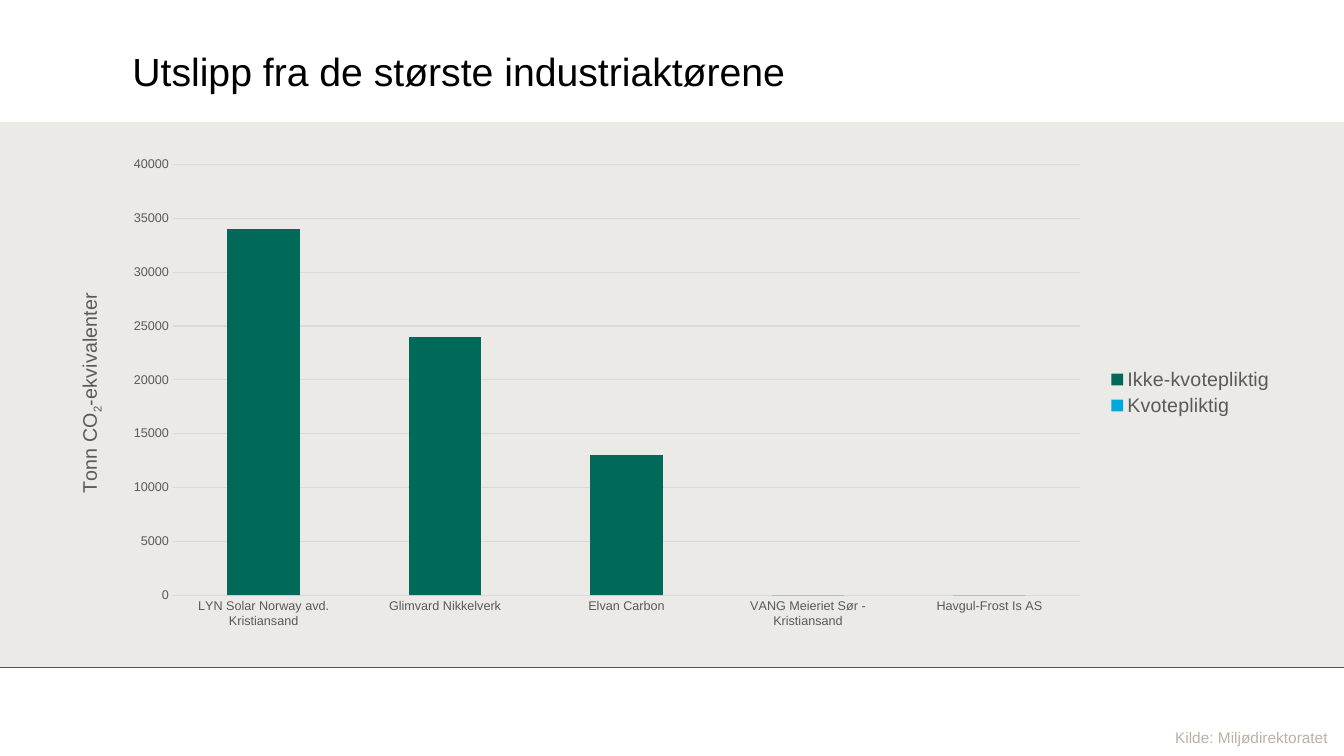
from dataclasses import dataclass

from lxml.etree import SubElement
from pptx import Presentation
from pptx.chart.axis import CategoryAxis, ValueAxis
from pptx.chart.chart import Chart
from pptx.chart.data import CategoryChartData
from pptx.dml.color import RGBColor
from pptx.enum.chart import XL_CHART_TYPE, XL_LEGEND_POSITION, XL_TICK_MARK
from pptx.enum.shapes import MSO_CONNECTOR, MSO_SHAPE
from pptx.enum.text import MSO_ANCHOR
from pptx.oxml import parse_xml
from pptx.oxml.ns import nsdecls, qn
from pptx.slide import Slide
from pptx.text.text import Font
from pptx.util import Pt

FONT = "Arial"
BLACK = RGBColor(0x00, 0x00, 0x00)
SAND = RGBColor(0xEC, 0xEA, 0xE6)
TAUPE = RGBColor(0xBA, 0xB2, 0xA4)
GREY = RGBColor(0x59, 0x59, 0x59)
GRID = RGBColor(0xD9, 0xD9, 0xD9)
BLUE = RGBColor(0x00, 0xA9, 0xDA)
GREEN = RGBColor(0x00, 0x69, 0x5A)

SLIDE_WIDTH, SLIDE_HEIGHT = 960, 540
BAND_TOP, BAND_BOTTOM = 87.1, 476.8
RULE_TOP = 476.6
CHART_LEFT, CHART_TOP, CHART_WIDTH, CHART_HEIGHT = 40.3, 105.1, 877, 350.6


@dataclass(frozen=True)
class Label:
    text: str
    left: float
    top: float
    width: float
    height: float
    size: float
    color: RGBColor
    inset_x: float = 0
    inset_y: float = 0
    anchor: MSO_ANCHOR = MSO_ANCHOR.MIDDLE
    wrap: bool = True


@dataclass(frozen=True)
class Emission:
    name: str
    tonnes: tuple[int, ...]
    color: RGBColor


LABELS = (
    Label("Utslipp fra de største industriaktørene", 94.6, 23.5, 799.2, 54, 28, BLACK),
    Label("Kilde: Miljødirektoratet", 832.3, 516.4, 127.4, 20.9, 11, TAUPE,
          7.2, 3.6, MSO_ANCHOR.TOP, False),
)
COMPANIES = (
    "LYN Solar Norway avd. Kristiansand",
    "Glimvard Nikkelverk",
    "Elvan Carbon",
    "VANG Meieriet Sør - Kristiansand",
    "Havgul-Frost Is AS",
)
EMISSIONS = (
    Emission("Kvotepliktig", (0, 0, 0, 0, 0), BLUE),
    Emission("Ikke-kvotepliktig", (34000, 24000, 13000, 0, 0), GREEN),
)
AXIS_TITLE = (("Tonn CO", False), ("2", True), ("-ekvivalenter", False))


def style_font(font: Font, size: float, color: RGBColor) -> None:
    font.name = FONT
    font.size = Pt(size)
    font.bold = False
    font.color.rgb = color


def add_band(slide: Slide) -> None:
    rule = slide.shapes.add_connector(
        MSO_CONNECTOR.STRAIGHT, Pt(0), Pt(RULE_TOP), Pt(SLIDE_WIDTH), Pt(RULE_TOP))
    rule.line.color.rgb = BLACK
    rule.line.width = Pt(0.75)
    SubElement(rule._element.spPr, qn("a:effectLst"))
    band = slide.shapes.add_shape(
        MSO_SHAPE.RECTANGLE, Pt(0), Pt(BAND_TOP), Pt(SLIDE_WIDTH), Pt(BAND_BOTTOM - BAND_TOP))
    band.shadow.inherit = False
    band.fill.solid()
    band.fill.fore_color.rgb = SAND
    band.line.fill.background()


def add_label(slide: Slide, label: Label) -> None:
    box = slide.shapes.add_textbox(
        Pt(label.left), Pt(label.top), Pt(label.width), Pt(label.height))
    frame = box.text_frame
    frame.word_wrap = label.wrap
    frame.vertical_anchor = label.anchor
    frame.margin_left = frame.margin_right = Pt(label.inset_x)
    frame.margin_top = frame.margin_bottom = Pt(label.inset_y)
    run = frame.paragraphs[0].add_run()
    run.text = label.text
    style_font(run.font, label.size, label.color)


def place(parent, index: int, **settings: object) -> None:
    for previous in parent.findall(qn("c:layout")):
        parent.remove(previous)
    layout = parse_xml(f"<c:layout {nsdecls('c')}><c:manualLayout/></c:layout>")
    for name, value in settings.items():
        SubElement(layout[0], qn(f"c:{name}")).set("val", str(value))
    parent.insert(index, layout)


def style_axis(axis: CategoryAxis | ValueAxis) -> None:
    axis.major_tick_mark = axis.minor_tick_mark = XL_TICK_MARK.NONE
    style_font(axis.tick_labels.font, 9, GREY)


def add_axis_title(axis: ValueAxis) -> None:
    title = axis.axis_title
    frame = title.text_frame
    body = frame._txBody.bodyPr
    body.set("rot", "-5400000")
    body.set("vert", "horz")
    for text, subscript in AXIS_TITLE:
        run = frame.paragraphs[0].add_run()
        run.text = text
        style_font(run.font, 14, GREY)
        if subscript:
            run.font._element.set("baseline", "-25000")
    place(title._element, 1, xMode="edge", yMode="edge",
          x=12.5 / CHART_WIDTH, y=102 / CHART_HEIGHT)


def style_chart(chart: Chart) -> None:
    style_font(chart.font, 10, BLACK)
    chart.has_title = False
    chart.has_legend = True
    chart.legend.position = XL_LEGEND_POSITION.RIGHT
    chart.legend.include_in_layout = False
    style_font(chart.legend.font, 14, GREY)

    plot = chart.plots[0]
    plot.gap_width = 150
    plot.overlap = 100
    plot.vary_by_categories = False
    for series, emission in zip(plot.series, EMISSIONS):
        series.format.fill.solid()
        series.format.fill.fore_color.rgb = emission.color

    style_axis(chart.category_axis)
    style_axis(chart.value_axis)
    chart.value_axis.minimum_scale = 0
    chart.value_axis.maximum_scale = 40000
    chart.value_axis.major_unit = 5000
    chart.value_axis.format.line.fill.background()
    for line in (chart.category_axis.format.line,
                 chart.value_axis.major_gridlines.format.line):
        line.color.rgb = GRID
        line.width = Pt(0.75)
    add_axis_title(chart.value_axis)
    place(chart._chartSpace.chart.plotArea, 0, layoutTarget="inner",
          xMode="edge", yMode="edge",
          x=83.2 / CHART_WIDTH, y=12.5 / CHART_HEIGHT,
          w=648 / CHART_WIDTH, h=307.5 / CHART_HEIGHT)


def add_emission_chart(slide: Slide) -> None:
    data = CategoryChartData(number_format="General")
    data.categories = COMPANIES
    for emission in EMISSIONS:
        data.add_series(emission.name, emission.tonnes)
    frame = slide.shapes.add_chart(
        XL_CHART_TYPE.COLUMN_STACKED, Pt(CHART_LEFT), Pt(CHART_TOP),
        Pt(CHART_WIDTH), Pt(CHART_HEIGHT), data)
    style_chart(frame.chart)


def main() -> None:
    presentation = Presentation()
    presentation.slide_width = Pt(SLIDE_WIDTH)
    presentation.slide_height = Pt(SLIDE_HEIGHT)
    slide = presentation.slides.add_slide(presentation.slide_layouts[6])
    add_band(slide)
    for label in LABELS:
        add_label(slide, label)
    add_emission_chart(slide)
    presentation.save("out.pptx")


if __name__ == "__main__":
    main()
